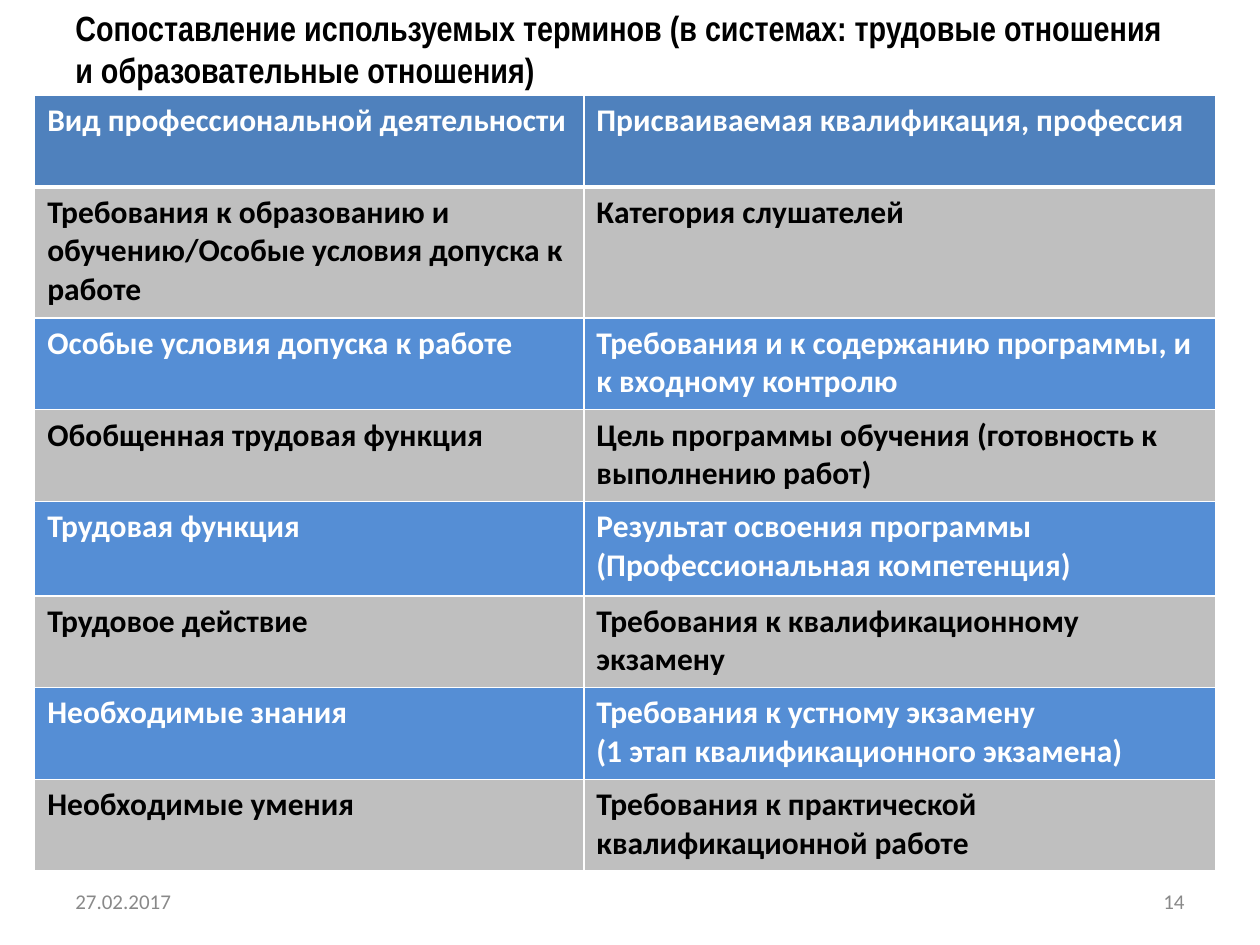
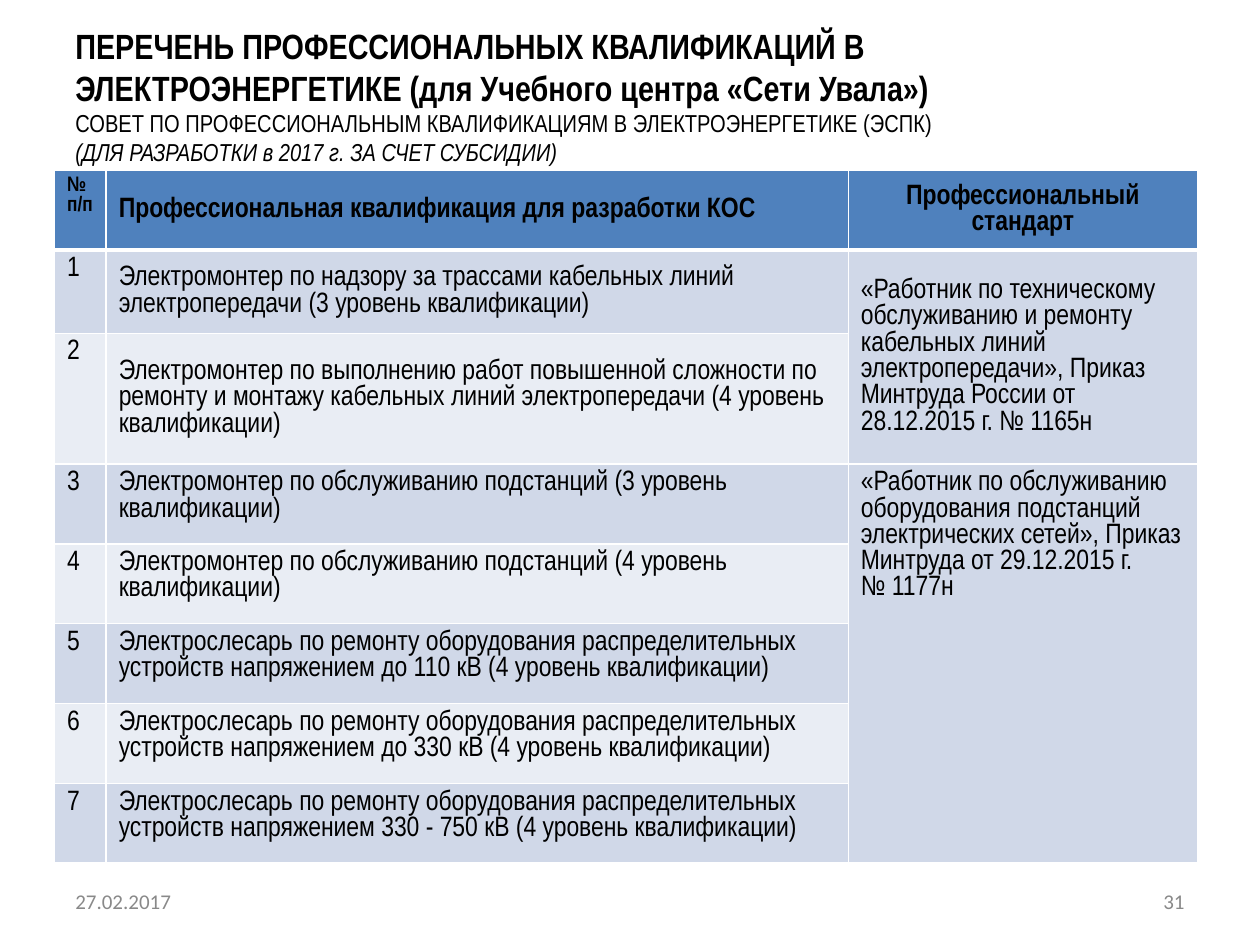
import pptx
import pptx.dml.color
import pptx.enum.text
import pptx.oxml
import pptx.oxml.ns
import pptx.util
from pptx.util import Cm

Anchor = pptx.enum.text.MSO_ANCHOR
Align = pptx.enum.text.PP_ALIGN

BLACK, WHITE, GREY = "000000", "FFFFFF", "898989"
HEADER_BLUE, ROW_BLUE, ROW_GREY = "4F81BD", "558ED5", "BFBFBF"
BAND_DARK, BAND_LIGHT = "D0D8E8", "E9EDF4"
TITLE_FONT, BODY_FONT = "Arial Narrow", "Calibri"
MARGIN, CONTENT_WIDTH = 1.27, 22.86
DATE = "27.02.2017"
NO_BREAK_SPACE = chr(160)

TERMS = [
    ("Вид профессиональной деятельности", "Присваиваемая квалификация, профессия"),
    ("Требования к образованию и обучению/Особые условия допуска к работе", "Категория слушателей"),
    ("Особые условия допуска к работе", "Требования и к содержанию программы, и к входному контролю"),
    ("Обобщенная трудовая функция", "Цель программы обучения (готовность к выполнению работ)"),
    ("Трудовая функция", "Результат освоения программы (Профессиональная компетенция)"),
    ("Трудовое действие", "Требования к квалификационному экзамену"),
    ("Необходимые знания", "Требования к устному экзамену\n(1 этап квалификационного экзамена)"),
    ("Необходимые умения", "Требования к практической квалификационной работе"),
]
QUALIFICATION_HEADERS = ("№ п/п", "Профессиональная квалификация для разработки КОС", "Профессиональный стандарт")
QUALIFICATIONS = [
    "Электромонтер по надзору за трассами кабельных линий электропередачи (3 уровень квалификации)",
    "Электромонтер по выполнению работ повышенной сложности по ремонту и монтажу "
    "кабельных линий электропередачи (4 уровень квалификации)",
    "Электромонтер по обслуживанию подстанций (3 уровень квалификации)",
    "Электромонтер по обслуживанию подстанций (4 уровень квалификации)",
    "Электрослесарь по ремонту оборудования распределительных устройств напряжением до 110 кВ (4 уровень квалификации)",
    "Электрослесарь по ремонту оборудования распределительных устройств напряжением до 330 кВ (4 уровень квалификации)",
    "Электрослесарь по ремонту оборудования распределительных устройств напряжением 330 - 750 кВ (4 уровень квалификации)",
]
STANDARDS = [
    (1, 2, Anchor.MIDDLE, "«Работник по техническому обслуживанию и ремонту кабельных линий "
     f"электропередачи», Приказ Минтруда России от 28.12.2015 г. №{NO_BREAK_SPACE}1165н"),
    (3, 7, Anchor.TOP, "«Работник по обслуживанию оборудования подстанций электрических сетей», "
     f"Приказ Минтруда от 29.12.2015 г. №{NO_BREAK_SPACE}1177н"),
]


def color(value):
    """Turn a hex string into a colour."""
    return pptx.dml.color.RGBColor.from_string(value)


def format_paragraph(paragraph, size, font_name, font_color, bold=False, italic=False, align=Align.LEFT):
    """Set the alignment of a paragraph and the font of its runs."""
    paragraph.alignment = align
    for run in paragraph.runs:
        run.font.size = pptx.util.Pt(size)
        run.font.name = font_name
        run.font.color.rgb = color(font_color)
        run.font.bold = bold
        run.font.italic = italic


def add_text(slide, box, lines, anchor=Anchor.TOP):
    """Add a text box with one paragraph per (text, format) pair."""
    shape = slide.shapes.add_textbox(*map(Cm, box))
    frame = shape.text_frame
    frame.word_wrap = True
    frame.vertical_anchor = anchor
    frame.text = "\n".join(text for text, _ in lines)
    for paragraph, (_, style) in zip(frame.paragraphs, lines):
        format_paragraph(paragraph, **style)


def add_title(slide, top, height, title, subtitles=()):
    """Add the bold title and its smaller lines."""
    lines = [(title, dict(size=20, font_name=TITLE_FONT, font_color=BLACK, bold=True))]
    for text, italic in subtitles:
        lines.append((text, dict(size=14, font_name=TITLE_FONT, font_color=BLACK, italic=italic)))
    add_text(slide, (MARGIN, top, CONTENT_WIDTH, height), lines)


def add_footer(slide, number):
    """Add the date at the left and the slide number at the right."""
    width = 5.92
    right = MARGIN + CONTENT_WIDTH - width
    for left, text, align in ((MARGIN, DATE, Align.LEFT), (right, number, Align.RIGHT)):
        style = dict(size=12, font_name=BODY_FONT, font_color=GREY, align=align)
        add_text(slide, (left, 17.65, width, 1.02), [(text, style)], Anchor.MIDDLE)


def set_borders(cell, bottom_width):
    """Draw white lines round a cell."""
    properties = cell._tc.get_or_add_tcPr()
    widths = {"lnL": 1, "lnR": 1, "lnT": 1, "lnB": bottom_width}
    for index, (tag, width) in enumerate(widths.items()):
        line = pptx.oxml.parse_xml(
            f'<a:{tag} {pptx.oxml.ns.nsdecls("a")} w="{pptx.util.Pt(width)}">'
            f'<a:solidFill><a:srgbClr val="{WHITE}"/></a:solidFill></a:{tag}>')
        properties.insert(index, line)


def add_grid(slide, left, top, column_widths, row_heights):
    """Add an empty table with the given column widths and row heights."""
    shape = slide.shapes.add_table(
        len(row_heights), len(column_widths), Cm(left), Cm(top),
        Cm(sum(column_widths)), Cm(sum(row_heights)))
    table = shape.table
    table.horz_banding = False
    for column, width in zip(table.columns, column_widths):
        column.width = Cm(width)
    for row, height in zip(table.rows, row_heights):
        row.height = Cm(height)
    return table


def paint_cells(table, fills):
    """Fill each row with its colour and draw the borders."""
    for index, (row, fill) in enumerate(zip(table.rows, fills)):
        for cell in row.cells:
            cell.fill.solid()
            cell.fill.fore_color.rgb = color(fill)
            set_borders(cell, 3 if index == 0 else 1)


def fill_cell(cell, text, anchor=Anchor.TOP, **style):
    """Write formatted text into a cell."""
    cell.text_frame.text = text
    cell.vertical_anchor = anchor
    for paragraph in cell.text_frame.paragraphs:
        format_paragraph(paragraph, **style)


def add_terms_table(slide, left, top):
    """Add the two-column comparison of terms."""
    table = add_grid(slide, left, top, (11.07, 12.73), [1.85, 2.64] + [1.85] * 2 + [1.9] + [1.85] * 3)
    paint_cells(table, [HEADER_BLUE] + [ROW_GREY, ROW_BLUE] * 3 + [ROW_GREY])
    for row, texts in enumerate(TERMS):
        for column, text in enumerate(texts):
            fill_cell(table.cell(row, column), text, size=18, font_name=BODY_FONT,
                      font_color=BLACK if row % 2 else WHITE, bold=True)


def add_qualifications_table(slide, left, top):
    """Add the numbered qualifications with their merged standards."""
    table = add_grid(slide, left, top, (1.04, 14.96, 7.04), [1.5, 1.68, 2.55] + [1.57] * 5)
    paint_cells(table, [HEADER_BLUE] + [BAND_DARK, BAND_LIGHT] * 3 + [BAND_DARK])
    style = dict(font_name=TITLE_FONT, font_color=BLACK)
    number, name, standard = QUALIFICATION_HEADERS
    fill_cell(table.cell(0, 0), number, size=12, bold=True, **style)
    fill_cell(table.cell(0, 1), name, Anchor.MIDDLE, size=16, bold=True, **style)
    fill_cell(table.cell(0, 2), standard, Anchor.MIDDLE, size=16, bold=True, align=Align.CENTER, **style)
    for row, text in enumerate(QUALIFICATIONS, 1):
        fill_cell(table.cell(row, 0), str(row), size=16, **style)
        fill_cell(table.cell(row, 1), text, Anchor.MIDDLE if row < 3 else Anchor.TOP, size=16, **style)
    for first, last, anchor, text in STANDARDS:
        table.cell(first, 2).merge(table.cell(last, 2))
        fill_cell(table.cell(first, 2), text, anchor, size=16, **style)


def build_terms_slide(slide):
    """Build the slide that compares the terms."""
    add_title(slide, 0, 1.93, "Сопоставление используемых терминов "
              "(в системах: трудовые отношения и образовательные отношения)")
    add_terms_table(slide, 0.7, 1.92)
    add_footer(slide, "14")


def build_qualifications_slide(slide):
    """Build the slide that lists the qualifications."""
    add_title(slide, 0.36, 3.03, "ПЕРЕЧЕНЬ ПРОФЕССИОНАЛЬНЫХ КВАЛИФИКАЦИЙ В ЭЛЕКТРОЭНЕРГЕТИКЕ "
              "(для Учебного центра «Сети Увала»)", [
                  ("СОВЕТ ПО ПРОФЕССИОНАЛЬНЫМ КВАЛИФИКАЦИЯМ В ЭЛЕКТРОЭНЕРГЕТИКЕ (ЭСПК)", False),
                  ("(ДЛЯ РАЗРАБОТКИ в 2017 г. ЗА СЧЕТ СУБСИДИИ)", True)])
    add_qualifications_table(slide, 1.1, 3.43)
    add_footer(slide, "31")


def main():
    """Build and save the presentation."""
    presentation = pptx.Presentation()
    presentation.slide_width, presentation.slide_height = Cm(25.4), Cm(19.05)
    for build in (build_terms_slide, build_qualifications_slide):
        build(presentation.slides.add_slide(presentation.slide_layouts[6]))
    presentation.save("out.pptx")


if __name__ == "__main__":
    main()
